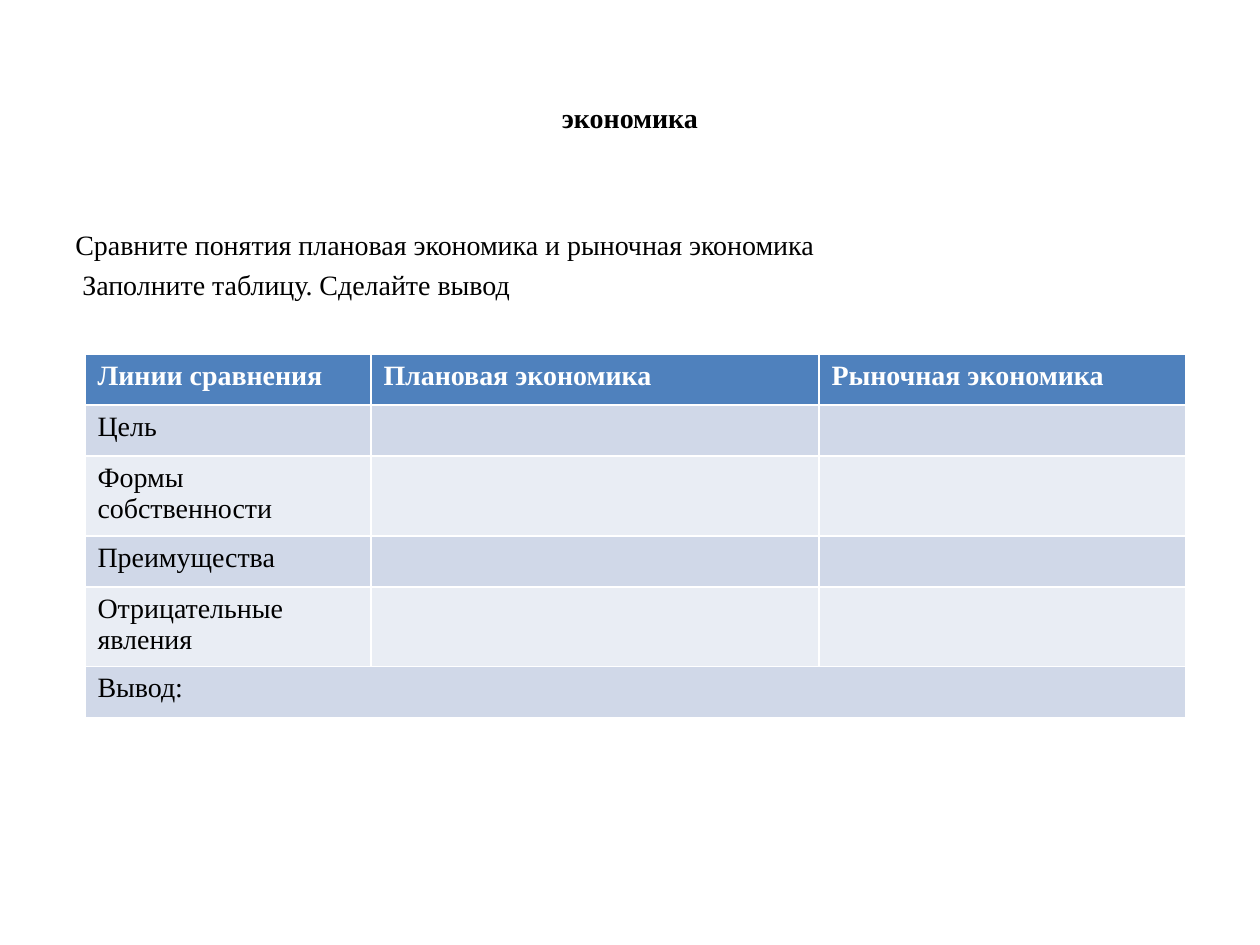
from pptx import Presentation
from pptx.dml.color import RGBColor
from pptx.enum.text import MSO_ANCHOR, PP_ALIGN
from pptx.util import Pt

SCALE = 914400 // 126
FONT = "Times New Roman"
BLACK, WHITE = "000000", "FFFFFF"
HEADER_FILL = "4F81BD"
BAND_FILLS = ["D0D8E8", "E9EDF4"]

TITLE = ["экономика"]
TASK = [
    "Сравните понятия плановая экономика и рыночная экономика",
    " Заполните таблицу. Сделайте вывод",
]
HEADERS = ["Линии сравнения", "Плановая экономика", "Рыночная экономика"]
CRITERIA = ["Цель", "Формы собственности", "Преимущества", "Отрицательные явления", "Вывод:"]

TITLE_BOX = (63, 38, 1134, 158)
TASK_BOX = (63, 221, 1134, 624)
TABLE_LEFT, TABLE_TOP = 85, 354
COLUMN_WIDTHS = [286, 448, 367]
ROW_HEIGHTS = [51, 51, 75, 51, 75, 51]


def px(length):
    return length * SCALE


def rgb(color):
    return RGBColor.from_string(color)


def write(para, text, color=BLACK, bold=False):
    span = para.add_run()
    span.text = text
    span.font.name = FONT
    span.font.size = Pt(16)
    span.font.bold = bold
    span.font.color.rgb = rgb(color)


def add_text(page, place, lines, align, anchor, gap, bold=False):
    frame = page.shapes.add_textbox(*map(px, place)).text_frame
    frame.word_wrap = True
    frame.vertical_anchor = anchor
    for index, line in enumerate(lines):
        para = frame.add_paragraph() if index else frame.paragraphs[0]
        para.alignment = align
        para.space_before = Pt(gap)
        write(para, line, bold=bold)


def add_comparison(page):
    rows = [HEADERS] + [[name, "", ""] for name in CRITERIA]
    place = (TABLE_LEFT, TABLE_TOP, sum(COLUMN_WIDTHS), sum(ROW_HEIGHTS))
    table = page.shapes.add_table(len(rows), len(HEADERS), *map(px, place)).table
    for column, width in zip(table.columns, COLUMN_WIDTHS):
        column.width = px(width)
    for row, height in zip(table.rows, ROW_HEIGHTS):
        row.height = px(height)
    for row_index, texts in enumerate(rows):
        header = row_index == 0
        fill = HEADER_FILL if header else BAND_FILLS[(row_index - 1) % 2]
        for column_index, text in enumerate(texts):
            cell = table.cell(row_index, column_index)
            cell.fill.solid()
            cell.fill.fore_color.rgb = rgb(fill)
            if text:
                write(cell.text_frame.paragraphs[0], text, WHITE if header else BLACK, header)
    last = len(rows) - 1
    table.cell(last, 0).merge(table.cell(last, len(HEADERS) - 1))


def main():
    deck = Presentation()
    deck.slide_width, deck.slide_height = px(1260), px(945)
    page = deck.slides.add_slide(deck.slide_layouts[6])
    add_text(page, TITLE_BOX, TITLE, PP_ALIGN.CENTER, MSO_ANCHOR.MIDDLE, 0, bold=True)
    add_text(page, TASK_BOX, TASK, PP_ALIGN.LEFT, MSO_ANCHOR.TOP, 4)
    add_comparison(page)
    deck.save("out.pptx")


if __name__ == "__main__":
    main()
